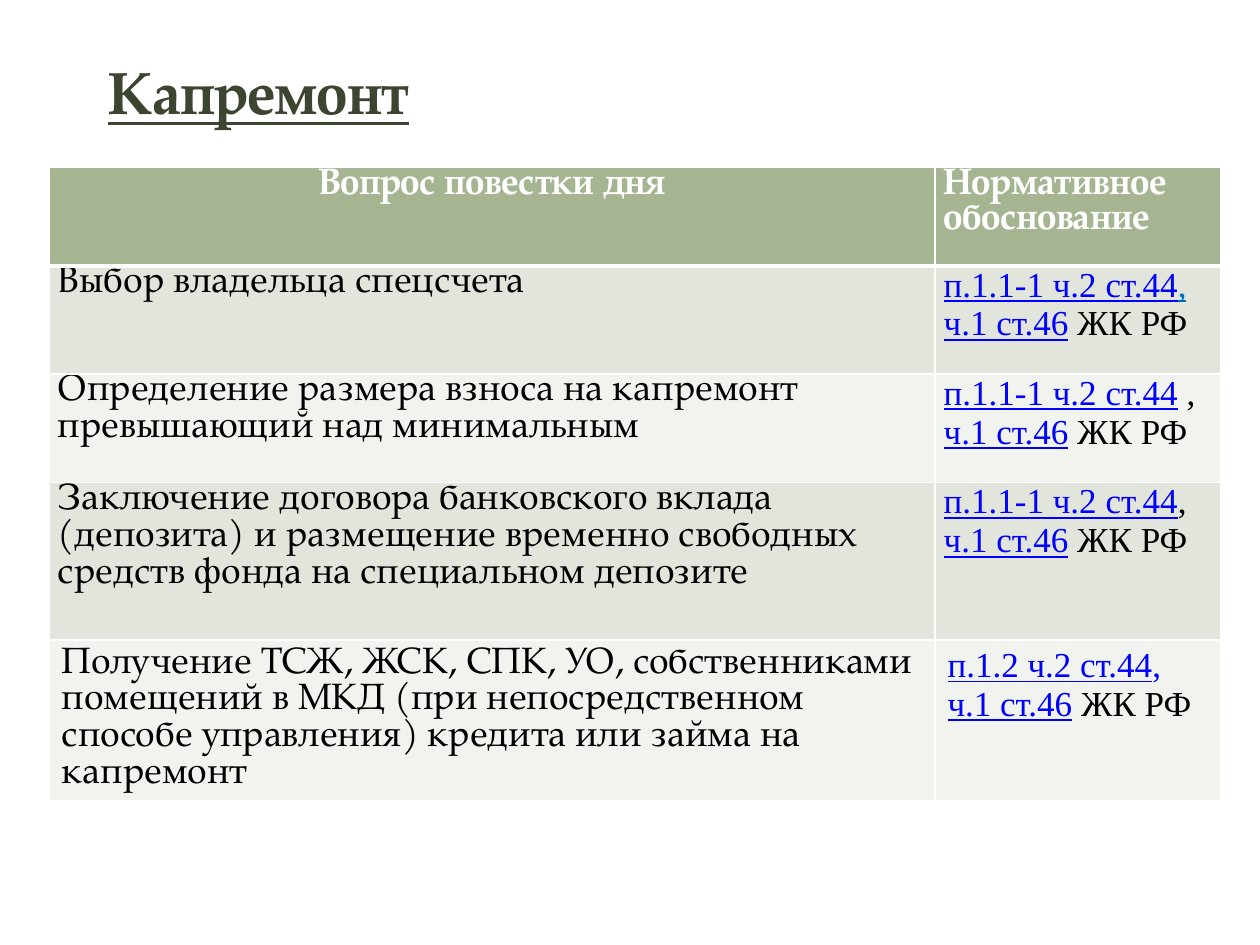
from dataclasses import dataclass

from lxml import etree
from pptx import Presentation
from pptx.dml.color import RGBColor
from pptx.enum.text import MSO_ANCHOR, PP_ALIGN
from pptx.oxml.ns import qn
from pptx.util import Inches, Pt

LEFT, CENTER, JUSTIFY = PP_ALIGN.LEFT, PP_ALIGN.CENTER, PP_ALIGN.JUSTIFY
TOP = MSO_ANCHOR.TOP


@dataclass(frozen=True)
class Theme:
    serif: str = "TeX Gyre Pagella"
    law: str = "Times New Roman"
    title: str = "3C452F"
    white: str = "FFFFFF"
    black: str = "000000"
    link: str = "0000FF"
    comma: str = "0070C0"
    header: str = "A5B592"
    bands: tuple = ("E1E5DC", "F0F3EE")
    title_size: int = 34
    cell_size: int = 21
    law_size: int = 20


T = Theme()


def style(name, size, color, bold=False, underline=False):
    return dict(name=name, size=Pt(size), bold=bold, underline=underline,
                color=color)


TITLE = style(T.serif, T.title_size, T.title, True, True)
HEAD = style(T.serif, T.cell_size, T.white, True)
TOPIC = style(T.serif, T.cell_size, T.black)
LAW = style(T.law, T.law_size, T.black)
LINK = style(T.law, T.law_size, T.link, underline=True)
LINK_COMMA = LINK | {"color": T.comma}
PLAIN_COMMA = LINK | {"underline": False}

ARTICLE = ("п.1.1-1 ч.2 ст.44", LINK)
CODE = [("ч.1 ст.46", LINK), (" ЖК РФ", LAW)]
ROWS = [
    ("Выбор владельца спецсчета", [ARTICLE, (",", LINK_COMMA)]),
    ("Определение размера взноса на капремонт превышающий над минимальным",
     [ARTICLE, (" ,", LAW)]),
    ("Заключение договора банковского вклада (депозита) и размещение "
     "временно свободных средств фонда на специальном депозите",
     [ARTICLE, (",", LAW)]),
    ("Получение ТСЖ, ЖСК, СПК, УО, собственниками помещений в МКД "
     "(при непосредственном способе управления) кредита или займа на "
     "капремонт",
     [("п.1.2 ч.2 ст.44", LINK), (",", PLAIN_COMMA)]),
]
COL_WIDTHS = (7.03, 2.27)
ROW_HEIGHTS = (0.78, 0.86, 0.86, 1.25, 1.26)


def add_run(p, text, fmt):
    r = p.add_run()
    r.text = text
    for key, value in fmt.items():
        if key == "color":
            r.font.color.rgb = RGBColor.from_string(value)
        else:
            setattr(r.font, key, value)


def write(tf, paragraphs, align):
    for i, runs in enumerate(paragraphs):
        p = tf.add_paragraph() if i else tf.paragraphs[0]
        p.alignment = align
        for text, fmt in runs:
            add_run(p, text, fmt)


def set_borders(cell, bottom):
    tcPr = cell._tc.get_or_add_tcPr()
    widths = {"a:lnL": 1, "a:lnR": 1, "a:lnT": 1, "a:lnB": bottom}
    for i, (tag, width) in enumerate(widths.items()):
        ln = etree.Element(qn(tag), w=str(Pt(width)))
        fill = etree.SubElement(ln, qn("a:solidFill"))
        etree.SubElement(fill, qn("a:srgbClr"), val=T.white)
        tcPr.insert(i, ln)


def fill_cell(cell, paragraphs, align, color, inset, bottom=1):
    x, y = inset
    fmt = dict(margin_left=Inches(x), margin_right=Inches(x),
               margin_top=Inches(y), margin_bottom=Inches(y),
               vertical_anchor=TOP)
    for key, value in fmt.items():
        setattr(cell, key, value)
    cell.fill.solid()
    cell.fill.fore_color.rgb = RGBColor.from_string(color)
    set_borders(cell, bottom)
    write(cell.text_frame, paragraphs, align)


def add_heading(s):
    title, body = s.placeholders
    title.element.getparent().remove(title.element)
    box = dict(left=0.31, top=0.39, width=9.38, height=6.88)
    for key, value in box.items():
        setattr(body, key, Inches(value))
    tf = body.text_frame
    tf.vertical_anchor = TOP
    write(tf, [[("Капремонт", TITLE)]], LEFT)
    p = tf.paragraphs[0]
    p.space_before = Pt(6)
    pPr = p._p.get_or_add_pPr()
    pPr.set("marL", str(Inches(0.45)))
    pPr.set("indent", "0")
    etree.SubElement(pPr, qn("a:buNone"))


def add_agenda(s):
    frame = s.shapes.add_table(
        len(ROW_HEIGHTS), len(COL_WIDTHS), Inches(0.39), Inches(1.33),
        Inches(sum(COL_WIDTHS)), Inches(sum(ROW_HEIGHTS)))
    table = frame.table
    for col, width in zip(table.columns, COL_WIDTHS):
        col.width = Inches(width)
    for row, height in zip(table.rows, ROW_HEIGHTS):
        row.height = Inches(height)

    tight, roomy = (0.07, 0), (0.1, 0.05)
    heads = (("Вопрос повестки дня", CENTER),
             ("Нормативное обоснование", JUSTIFY))
    for c, (text, align) in enumerate(heads):
        fill_cell(table.cell(0, c), [[(text, HEAD)]], align, T.header,
                  tight, bottom=3)
    for i, (topic, article) in enumerate(ROWS, 1):
        last = i == len(ROWS)
        inset = roomy if last else tight
        color = T.bands[(i - 1) % 2]
        fill_cell(table.cell(i, 0), [[(topic, TOPIC)]], LEFT, color, inset)
        fill_cell(table.cell(i, 1), [article, CODE],
                  LEFT if last else JUSTIFY, color, inset)


def main():
    prs = Presentation()
    prs.slide_width, prs.slide_height = Inches(10), Inches(7.5)
    s = prs.slides.add_slide(prs.slide_layouts[1])
    add_heading(s)
    add_agenda(s)
    prs.save("out.pptx")


if __name__ == "__main__":
    main()
